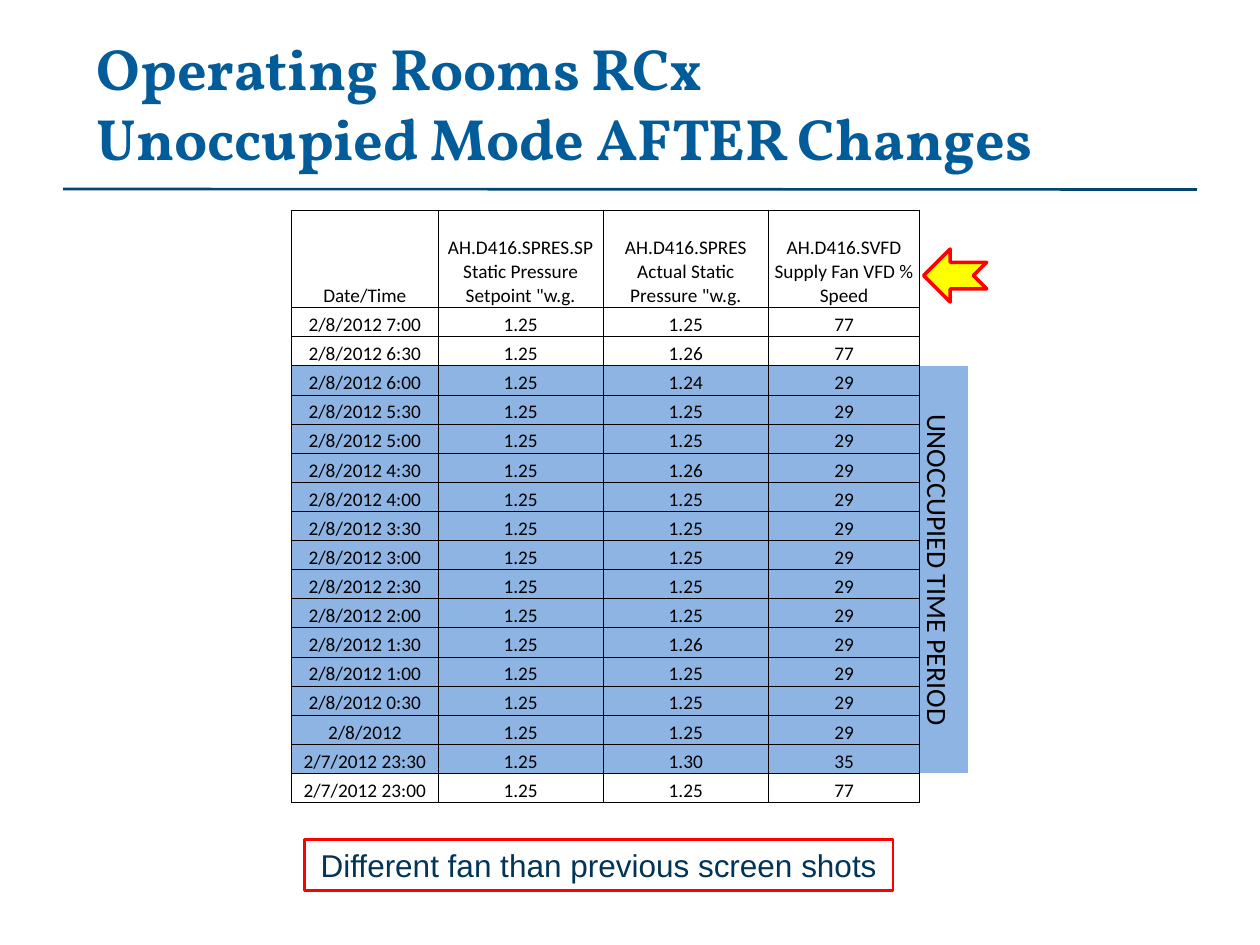
import lxml.etree
import pptx
import pptx.dml.color
import pptx.enum.shapes
import pptx.enum.text
import pptx.oxml
import pptx.oxml.ns
import pptx.util

Cm = pptx.util.Cm
Pt = pptx.util.Pt
RGBColor = pptx.dml.color.RGBColor
MSO_ANCHOR = pptx.enum.text.MSO_ANCHOR
MSO_SHAPE = pptx.enum.shapes.MSO_SHAPE
PP_ALIGN = pptx.enum.text.PP_ALIGN
qn = pptx.oxml.ns.qn

TITLE_BLUE = RGBColor(0x02, 0x5C, 0x9A)
RULE_BLUE = RGBColor(0x02, 0x45, 0x72)
NOTE_BLUE = RGBColor(0x01, 0x34, 0x57)
UNOCCUPIED_BLUE = RGBColor(0x8D, 0xB4, 0xE2)
BLACK = RGBColor(0x00, 0x00, 0x00)
WHITE = RGBColor(0xFF, 0xFF, 0xFF)
RED = RGBColor(0xFF, 0x00, 0x00)
YELLOW = RGBColor(0xFF, 0xFF, 0x00)

NO_TABLE_STYLE = "{2D5ABB26-0587-4C30-8999-92F81FD0307C}"
COLUMN_WIDTHS = [2.95, 3.33, 3.33, 3.05, 0.97]
HEADER_HEIGHT = 1.96
READINGS_HEIGHT = 9.98

HEADERS = [
    "Date/Time",
    'AH.D416.SPRES.SP\vStatic Pressure Setpoint "w.g.',
    'AH.D416.SPRES\vActual Static Pressure "w.g.',
    "AH.D416.SVFD\vSupply Fan VFD % Speed",
]
SETPOINT = "1.25"
# Date/time, actual static pressure, fan speed
READINGS = [
    ("2/8/2012 7:00", "1.25", "77"),
    ("2/8/2012 6:30", "1.26", "77"),
    ("2/8/2012 6:00", "1.24", "29"),
    ("2/8/2012 5:30", "1.25", "29"),
    ("2/8/2012 5:00", "1.25", "29"),
    ("2/8/2012 4:30", "1.26", "29"),
    ("2/8/2012 4:00", "1.25", "29"),
    ("2/8/2012 3:30", "1.25", "29"),
    ("2/8/2012 3:00", "1.25", "29"),
    ("2/8/2012 2:30", "1.25", "29"),
    ("2/8/2012 2:00", "1.25", "29"),
    ("2/8/2012 1:30", "1.26", "29"),
    ("2/8/2012 1:00", "1.25", "29"),
    ("2/8/2012 0:30", "1.25", "29"),
    ("2/8/2012", "1.25", "29"),
    ("2/7/2012 23:30", "1.30", "35"),
    ("2/7/2012 23:00", "1.25", "77"),
]
ROW_HEIGHT = READINGS_HEIGHT / len(READINGS)
FIRST_UNOCCUPIED, LAST_UNOCCUPIED = 3, 16


def format_runs(paragraph, font_name, size, color, bold=False):
    for run in paragraph.runs:
        run.font.name = font_name
        run.font.size = Pt(size)
        run.font.color.rgb = color
        run.font.bold = bold


def add_title(slide, text):
    box = slide.shapes.add_textbox(Cm(1.7), Cm(0.64), Cm(22.86), Cm(2.97))
    text_frame = box.text_frame
    text_frame.word_wrap = True
    text_frame.vertical_anchor = MSO_ANCHOR.TOP
    text_frame.margin_top = 0
    paragraph = text_frame.paragraphs[0]
    paragraph.text = text
    paragraph.line_spacing = Pt(40)
    format_runs(paragraph, "Vollkorn", 33.3, TITLE_BLUE, bold=True)


def add_rule(slide):
    rule = slide.shapes.add_connector(
        pptx.enum.shapes.MSO_CONNECTOR.STRAIGHT,
        Cm(1.27), Cm(3.81), Cm(24.13), Cm(3.82))
    rule.line.color.rgb = RULE_BLUE
    rule.line.width = Pt(1.5)
    lxml.etree.SubElement(rule._element.spPr, qn("a:effectLst"))


def add_shape(slide, kind, left, top, width, height, fill, line_width):
    shape = slide.shapes.add_shape(kind, Cm(left), Cm(top), Cm(width), Cm(height))
    shape.shadow.inherit = False
    shape.fill.solid()
    shape.fill.fore_color.rgb = fill
    shape.line.color.rgb = RED
    shape.line.width = Pt(line_width)
    return shape


def set_borders(cell, sides):
    properties = cell._tc.get_or_add_tcPr()
    for side in sides:
        line = lxml.etree.SubElement(properties, qn(f"a:ln{side}"), w=str(Pt(0.5)))
        fill = lxml.etree.SubElement(line, qn("a:solidFill"))
        lxml.etree.SubElement(fill, qn("a:srgbClr"), val=str(BLACK))


def fill_cell(cell, shaded):
    if shaded:
        cell.fill.solid()
        cell.fill.fore_color.rgb = UNOCCUPIED_BLUE
    else:
        cell.fill.background()


def set_cell_layout(cell, anchor):
    cell.margin_left = cell.margin_right = cell.margin_top = Cm(0.02)
    cell.margin_bottom = 0
    cell.vertical_anchor = anchor


def write_cell(cell, text, size=11, anchor=MSO_ANCHOR.BOTTOM):
    set_cell_layout(cell, anchor)
    paragraph = cell.text_frame.paragraphs[0]
    paragraph.text = text
    paragraph.alignment = PP_ALIGN.CENTER
    format_runs(paragraph, "Calibri", size, BLACK)


def shrink_empty_cell(cell):
    """Keep an empty cell from stretching its row."""
    set_cell_layout(cell, MSO_ANCHOR.BOTTOM)
    paragraph = cell.text_frame.paragraphs[0]
    lxml.etree.SubElement(paragraph._p, qn("a:endParaRPr"), sz="1100")


def add_readings_table(slide):
    rows = [HEADERS] + [(time, SETPOINT, actual, speed)
                        for time, actual, speed in READINGS]
    frame = slide.shapes.add_table(
        len(rows), len(COLUMN_WIDTHS), Cm(5.88), Cm(4.24),
        Cm(sum(COLUMN_WIDTHS)), Cm(HEADER_HEIGHT + READINGS_HEIGHT))
    table = frame.table
    table.first_row = table.horz_banding = False
    table._tbl.tblPr.find(qn("a:tableStyleId")).text = NO_TABLE_STYLE
    for column, width in zip(table.columns, COLUMN_WIDTHS):
        column.width = Cm(width)

    # Readings, with the last column kept for the period label
    label_column = len(COLUMN_WIDTHS) - 1
    for row_index, values in enumerate(rows):
        table.rows[row_index].height = Cm(ROW_HEIGHT if row_index else HEADER_HEIGHT)
        shaded = FIRST_UNOCCUPIED <= row_index <= LAST_UNOCCUPIED
        for column_index, value in enumerate(values):
            cell = table.cell(row_index, column_index)
            write_cell(cell, value)
            set_borders(cell, "LRTB")
            fill_cell(cell, shaded)
        side_cell = table.cell(row_index, label_column)
        if row_index != FIRST_UNOCCUPIED:
            shrink_empty_cell(side_cell)
        set_borders(side_cell, "L")
        fill_cell(side_cell, shaded)

    # Vertical label beside the shaded rows
    label = table.cell(FIRST_UNOCCUPIED, label_column)
    label.merge(table.cell(LAST_UNOCCUPIED, label_column))
    write_cell(label, "UNOCCUPIED TIME PERIOD", 16, MSO_ANCHOR.MIDDLE)
    label._tc.get_or_add_tcPr().set("vert", "vert")


def add_note(slide, text):
    note = add_shape(slide, MSO_SHAPE.RECTANGLE, 6.14, 16.93, 11.86, 1.02, WHITE, 1.5)
    text_frame = note.text_frame
    text_frame.word_wrap = True
    text_frame.vertical_anchor = MSO_ANCHOR.MIDDLE
    paragraph = text_frame.paragraphs[0]
    paragraph.text = text
    paragraph.alignment = PP_ALIGN.CENTER
    format_runs(paragraph, "Arial", 18, NOTE_BLUE)


def main():
    presentation = pptx.Presentation()
    presentation.slide_width = Cm(25.4)
    presentation.slide_height = Cm(19.05)
    slide = presentation.slides.add_slide(presentation.slide_layouts[6])

    # Heading
    add_rule(slide)
    add_title(slide, "Operating Rooms RCx\vUnoccupied Mode AFTER Changes")

    # Readings and the arrow at the fan speed column
    add_readings_table(slide)
    arrow = add_shape(slide, MSO_SHAPE.NOTCHED_RIGHT_ARROW,
                      18.62, 5.02, 1.27, 1.07, YELLOW, 2)
    arrow.rotation = 180

    # Footnote
    add_note(slide, "Different fan than previous screen shots")

    presentation.save("out.pptx")


if __name__ == "__main__":
    main()
